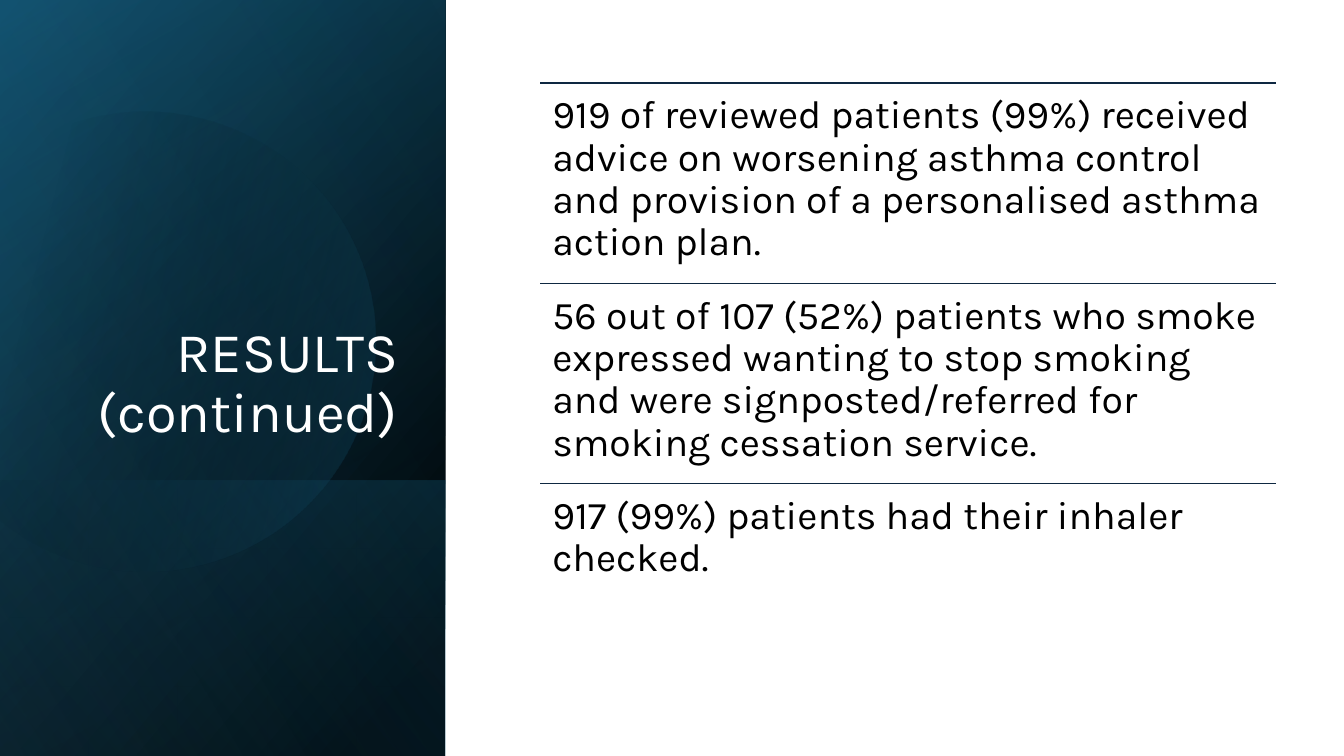
from math import cos, radians, sin

from pptx import Presentation
from pptx.dml.color import RGBColor
from pptx.enum.shapes import MSO_CONNECTOR as Link, MSO_SHAPE as Preset
from pptx.enum.text import MSO_ANCHOR as Anchor, MSO_AUTO_SIZE as Fit, PP_ALIGN as Align
from pptx.oxml.ns import qn
from pptx.oxml.xmlchemy import OxmlElement as Node
from pptx.util import Cm, Pt

BLACK = RGBColor(0x00, 0x00, 0x00)
WHITE = RGBColor(0xFF, 0xFF, 0xFF)
DEEP = RGBColor(0x10, 0x48, 0x62)
TEAL = RGBColor(0x15, 0x60, 0x82)
SKY = RGBColor(0x46, 0xB1, 0xE1)
NAVY = RGBColor(0x0E, 0x28, 0x41)

WIDE, HIGH = 33.87, 19.05
SIDE = 11.22
FOOT = 12.1
ITEMS = (
    "919 of reviewed patients (99%) received advice on worsening asthma control "
    "and provision of a personalised asthma action plan.",
    "56 out of 107 (52%) patients who smoke expressed wanting to stop smoking "
    "and were signposted/referred for smoking cessation service.",
    "917 (99%) patients had their inhaler checked.",
)
LEFT, TOP, SPAN, STEP = 13.62, 2.09, 18.53, 5.05


def assign(target, values):
    for name, value in values.items():
        setattr(target, name, value)


def shade(shape, angle, *stops):
    """Fill with a clockwise gradient; each stop is (percent, colour, opacity)."""
    shape.shadow.inherit = False
    shape.line.fill.background()
    shape.fill.gradient()
    shape.fill.gradient_angle = 360 - angle
    for stop, (percent, color, _) in zip(shape.fill.gradient_stops, stops):
        stop.position = percent / 100
        stop.color.rgb = color
    tints = list(shape._element.spPr.iter(qn("a:srgbClr")))
    for tint, (_, _, solid) in zip(tints, stops):
        if solid < 100:
            alpha = Node("a:alpha")
            alpha.set("val", str(solid * 1000))
            tint.append(alpha)


def add_panel(slide, top, angle, *stops):
    """Shade the side strip from top down, as a mirrored box on its end."""
    tall = HIGH - top
    shift = (SIDE - tall) / 2
    panel = slide.shapes.add_shape(
        Preset.RECTANGLE, Cm(shift), Cm(top - shift), Cm(tall), Cm(SIDE))
    panel.rotation = 90
    panel._element.spPr.xfrm.set("flipH", "1")
    shade(panel, angle, *stops)


def add_disc(slide):
    """Draw a circle cut off by a chord near the slide's left edge."""
    mid_x, mid_y, radius = 3.64, 8.5, 5.8
    start, end = -118, 150
    rim = [(Cm(mid_x + radius * cos(radians(turn))),
            Cm(mid_y + radius * sin(radians(turn))))
           for turn in (start, -90, 0, 90, end)]
    pen = slide.shapes.build_freeform(*rim[0])
    pen.add_line_segments(rim[1:], close=True)
    disc = pen.convert_to_shape()
    disc.rotation = 343.9
    bend(disc, radius, start, end)
    shade(disc, 30, (29, BLACK, 0), (100, TEAL, 43))


def bend(shape, radius, start, end):
    """Swap the straight edges of an outline for one round arc."""
    edges = list(shape._element.spPr.iter(qn("a:lnTo")))
    arc = Node("a:arcTo")
    size = str(Cm(radius))
    turns = {"wR": size, "hR": size, "stAng": str(start % 360 * 60000),
             "swAng": str((end - start) * 60000)}
    for name, value in turns.items():
        arc.set(name, value)
    edges[0].addprevious(arc)
    for edge in edges:
        edge.getparent().remove(edge)


def write(shape, text, size, color, align, **frame):
    body = shape.text_frame
    body.text = text
    assign(body, {"word_wrap": True, "auto_size": Fit.NONE, **frame})
    para = body.paragraphs[0]
    assign(para, {"alignment": align, "line_spacing": 0.9})
    assign(para.runs[0].font, {"name": "Karla", "size": Pt(size)})
    para.runs[0].font.color.rgb = color


def add_title(slide, text):
    title = slide.shapes.title
    assign(title, {"left": Cm(1.62), "top": Cm(4.69),
                   "width": Cm(8.66), "height": Cm(6.65)})
    write(title, text, 40, WHITE, Align.RIGHT, vertical_anchor=Anchor.BOTTOM)
    slide.shapes._spTree.append(title._element)


def add_rule(slide, top):
    rule = slide.shapes.add_connector(
        Link.STRAIGHT, Cm(LEFT), Cm(top), Cm(LEFT + SPAN), Cm(top))
    rule.line.color.rgb = NAVY
    rule.line.width = Pt(1)
    rule._element.spPr.append(Node("a:effectLst"))


def add_item(slide, top, text):
    add_rule(slide, top)
    box = slide.shapes.add_textbox(Cm(LEFT), Cm(top), Cm(SPAN), Cm(STEP))
    pads = {f"margin_{edge}": Cm(0.3) for edge in ("left", "top", "right", "bottom")}
    write(box, text, 28, BLACK, Align.LEFT, vertical_anchor=Anchor.TOP, **pads)


def main():
    deck = Presentation()
    assign(deck, {"slide_width": Cm(WIDE), "slide_height": Cm(HIGH)})
    slide = deck.slides.add_slide(deck.slide_layouts[5])
    add_panel(slide, 0, 50, (8, BLACK, 100), (100, DEEP, 100))
    add_panel(slide, 0, 30, (0, BLACK, 0), (99, TEAL, 46))
    add_panel(slide, FOOT, 130, (2, TEAL, 29), (100, BLACK, 30))
    add_disc(slide)
    add_panel(slide, 0, 120, (0, BLACK, 0), (99, SKY, 11))
    add_title(slide, "RESULTS (continued)")
    for row, text in enumerate(ITEMS):
        add_item(slide, TOP + row * STEP, text)
    deck.save("out.pptx")


if __name__ == "__main__":
    main()
